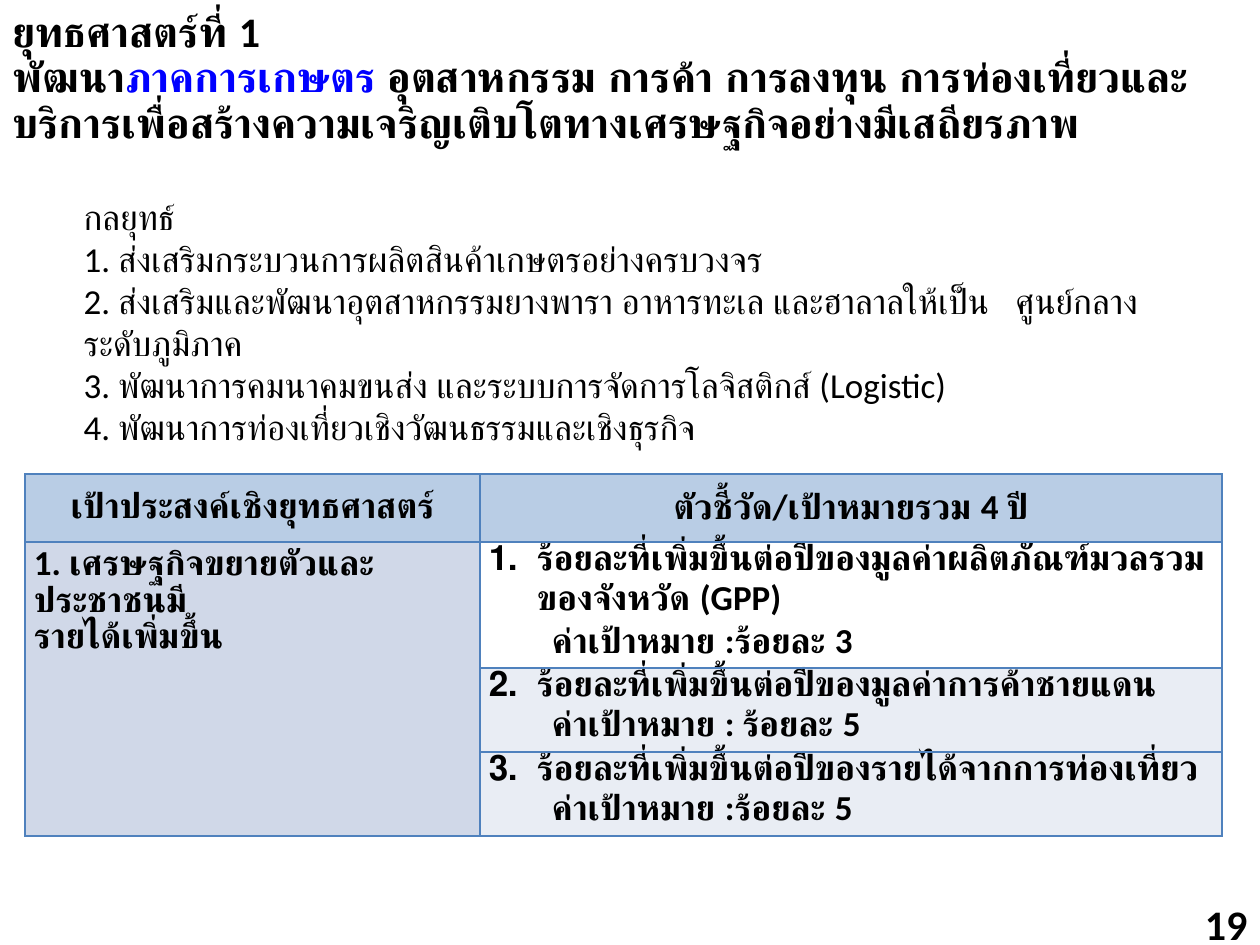
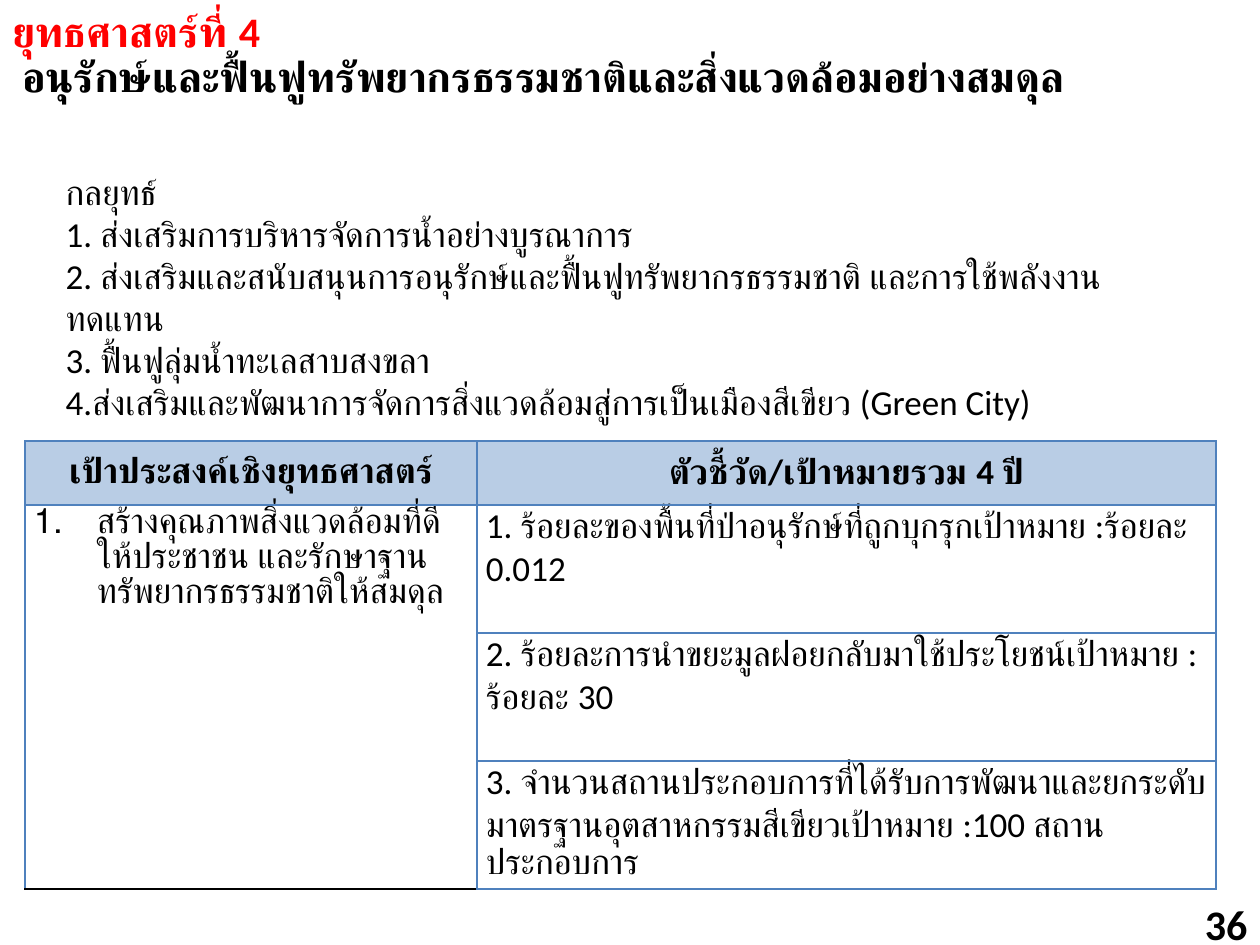
from lxml import etree
from pptx import Presentation
from pptx.dml.color import RGBColor
from pptx.enum.text import MSO_ANCHOR, MSO_AUTO_SIZE, PP_ALIGN
from pptx.oxml.ns import qn
from pptx.util import Emu, Pt

PX = 914400 // 126
BLACK = RGBColor(0x00, 0x00, 0x00)
BLUE = RGBColor(0x00, 0x00, 0xFF)
RED = RGBColor(0xFF, 0x00, 0x00)
HEAD = RGBColor(0xB9, 0xCD, 0xE5)
GOAL = RGBColor(0xD0, 0xD8, 0xE8)
PALE = RGBColor(0xE9, 0xED, 0xF4)
GRID = RGBColor(0x4F, 0x81, 0xBD)
FONT = "Calibri"
HEADERS = ["เป้าประสงค์เชิงยุทธศาสตร์", "ตัวชี้วัด/เป้าหมายรวม 4 ปี"]

# Goal and indicators are lists of paragraphs; "start" numbers the first one
SLIDES = [
    dict(
        number="19",
        title=[("ยุทธศาสตร์ที่ 1 \nพัฒนา", BLACK), ("ภาคการเกษตร ", BLUE),
               ("อุตสาหกรรม การค้า การลงทุน การท่องเที่ยวและบริการ"
                "เพื่อสร้างความเจริญเติบโตทางเศรษฐกิจอย่างมีเสถียรภาพ", BLACK)],
        title_h=150,
        body=["กลยุทธ์",
              "1. ส่งเสริมกระบวนการผลิตสินค้าเกษตรอย่างครบวงจร",
              "2. ส่งเสริมและพัฒนาอุตสาหกรรมยางพารา อาหารทะเล และฮาลาลให้เป็น   ศูนย์กลางระดับภูมิภาค",
              "3. พัฒนาการคมนาคมขนส่ง และระบบการจัดการโลจิสติกส์ (Logistic)",
              "4. พัฒนาการท่องเที่ยวเชิงวัฒนธรรมและเชิงธุรกิจ"],
        body_at=(71, 189, 1091, 267),
        table_top=474, cols=(455, 742), rows=(68, 101, 75, 76),
        bold=True, goal_fill=GOAL, fills=(None, PALE, PALE), goal_bottom=GRID,
        goal=["1. เศรษฐกิจขยายตัวและประชาชนมี\nรายได้เพิ่มขึ้น"],
        goal_indent=0, indent=48,
        indicators=[
            ["ร้อยละที่เพิ่มขึ้นต่อปีของมูลค่าผลิตภัณฑ์มวลรวมของจังหวัด (GPP)",
             "\tค่าเป้าหมาย :ร้อยละ 3"],
            ["ร้อยละที่เพิ่มขึ้นต่อปีของมูลค่าการค้าชายแดน",
             "\tค่าเป้าหมาย : ร้อยละ 5"],
            ["ร้อยละที่เพิ่มขึ้นต่อปีของรายได้จากการท่องเที่ยว",
             "\tค่าเป้าหมาย :ร้อยละ 5"]],
    ),
    dict(
        number="36",
        title=[("ยุทธศาสตร์ที่ 4\n", RED),
               (" อนุรักษ์และฟื้นฟูทรัพยากรธรรมชาติและสิ่งแวดล้อมอย่างสมดุล", BLACK)],
        title_h=105,
        body=["กลยุทธ์",
              "1. ส่งเสริมการบริหารจัดการน้ำอย่างบูรณาการ\n"
              "2. ส่งเสริมและสนับสนุนการอนุรักษ์และฟื้นฟูทรัพยากรธรรมชาติ และการใช้พลังงานทดแทน\n"
              "3. ฟื้นฟูลุ่มน้ำทะเลสาบสงขลา\n"
              "4.ส่งเสริมและพัฒนาการจัดการสิ่งแวดล้อมสู่การเป็นเมืองสีเขียว (Green City)"],
        body_at=(53, 164, 1145, 224),
        table_top=441, cols=(452, 739), rows=(64, 128, 128, 128),
        bold=False, goal_fill=None, fills=(None, None, None), goal_bottom=BLACK,
        goal=["สร้างคุณภาพสิ่งแวดล้อมที่ดีให้ประชาชน และรักษาฐานทรัพยากรธรรมชาติให้สมดุล"],
        goal_indent=63, indent=0,
        indicators=[
            ["1. ร้อยละของพื้นที่ป่าอนุรักษ์ที่ถูกบุกรุกเป้าหมาย :ร้อยละ 0.012"],
            ["2. ร้อยละการนำขยะมูลฝอยกลับมาใช้ประโยชน์เป้าหมาย : ร้อยละ 30"],
            ["3. จำนวนสถานประกอบการที่ได้รับการพัฒนาและยกระดับมาตรฐาน"
             "อุตสาหกรรมสีเขียวเป้าหมาย :100 สถานประกอบการ"]],
    ),
]


def write(tf, paragraphs, size=20, bold=False, align=PP_ALIGN.LEFT):
    """Fill a text frame; each paragraph is a string or a list of (text, colour)."""
    for i, runs in enumerate(paragraphs):
        p = tf.paragraphs[0] if i == 0 else tf.add_paragraph()
        p.alignment = align
        p.space_before = Pt(0)
        for text, color in [(runs, BLACK)] if isinstance(runs, str) else runs:
            for n, line in enumerate(text.split("\n")):
                if n:
                    p.add_line_break()
                if line:
                    r = p.add_run()
                    r.text = line
                    r.font.name, r.font.size, r.font.bold = FONT, Pt(size), bold
                    r.font.color.rgb = color


def fill_cell(cell, paragraphs, bold, fill=None, indent=0, start=1, bottom=GRID,
              align=PP_ALIGN.LEFT, anchor=MSO_ANCHOR.TOP):
    """Write one table cell with its fill, borders and optional numbering."""
    cell.margin_left = cell.margin_right = 9 * PX
    cell.margin_top = cell.margin_bottom = 0
    cell.vertical_anchor = anchor
    write(cell.text_frame, paragraphs, bold=bold, align=align)
    if indent:
        pPr = cell.text_frame.paragraphs[0]._p.get_or_add_pPr()
        pPr.set("marL", str(indent * PX))
        pPr.set("indent", str(-indent * PX))
        etree.SubElement(pPr, qn("a:buFont"), typeface="+mj-lt")
        etree.SubElement(pPr, qn("a:buAutoNum"), type="arabicPeriod", startAt=str(start))
    if fill is None:
        cell.fill.background()
    else:
        cell.fill.solid()
        cell.fill.fore_color.rgb = fill
    tcPr = cell._tc.get_or_add_tcPr()
    for i, side in enumerate("LRTB"):
        ln = etree.Element(qn("a:ln" + side), w="12700")
        solid = etree.SubElement(ln, qn("a:solidFill"))
        color = bottom if side == "B" else GRID
        etree.SubElement(solid, qn("a:srgbClr"), val=str(color))
        tcPr.insert(i, ln)


prs = Presentation()
prs.slide_width, prs.slide_height = Emu(1260 * PX), Emu(945 * PX)

for d in SLIDES:
    s = prs.slides.add_slide(prs.slide_layouts[1])
    title, body = s.shapes.title, s.placeholders[1]

    # Strategy list
    body.left, body.top, body.width, body.height = [v * PX for v in d["body_at"]]
    tf = body.text_frame
    tf.auto_size = MSO_AUTO_SIZE.SHAPE_TO_FIT_TEXT
    write(tf, d["body"])
    for p in tf.paragraphs:
        pPr = p._p.get_or_add_pPr()
        pPr.set("marL", "0")
        pPr.set("indent", "0")
        etree.SubElement(pPr, qn("a:buNone"))

    # Goals and indicators
    tb = s.shapes.add_table(4, 2, 25 * PX, d["table_top"] * PX,
                            sum(d["cols"]) * PX, sum(d["rows"]) * PX).table
    for col, w in zip(tb.columns, d["cols"]):
        col.width = w * PX
    for row, h in zip(tb.rows, d["rows"]):
        row.height = h * PX
    for c, text in enumerate(HEADERS):
        fill_cell(tb.cell(0, c), [text], True, HEAD,
                  align=PP_ALIGN.CENTER, anchor=MSO_ANCHOR.MIDDLE)
    tb.cell(1, 0).merge(tb.cell(3, 0))
    for r, text in enumerate(d["indicators"], 1):
        fill_cell(tb.cell(r, 0), d["goal"] if r == 1 else [], d["bold"], d["goal_fill"],
                  d["goal_indent"] if r == 1 else 0, bottom=d["goal_bottom"])
        fill_cell(tb.cell(r, 1), text, d["bold"], d["fills"][r - 1], d["indent"], r)

    # Title
    title.left, title.top, title.width, title.height = 0, 5 * PX, 1260 * PX, d["title_h"] * PX
    tf = title.text_frame
    tf.auto_size = MSO_AUTO_SIZE.SHAPE_TO_FIT_TEXT
    tf.vertical_anchor = MSO_ANCHOR.TOP
    write(tf, [d["title"]], 24, True)
    tf.paragraphs[0].line_spacing = 0.9

    # Page number
    tf = s.shapes.add_textbox(1169 * PX, 903 * PX, 91 * PX, 42 * PX).text_frame
    tf.word_wrap = True
    tf.vertical_anchor = MSO_ANCHOR.MIDDLE
    write(tf, [d["number"]], 24, True, PP_ALIGN.RIGHT)

prs.save("out.pptx")
